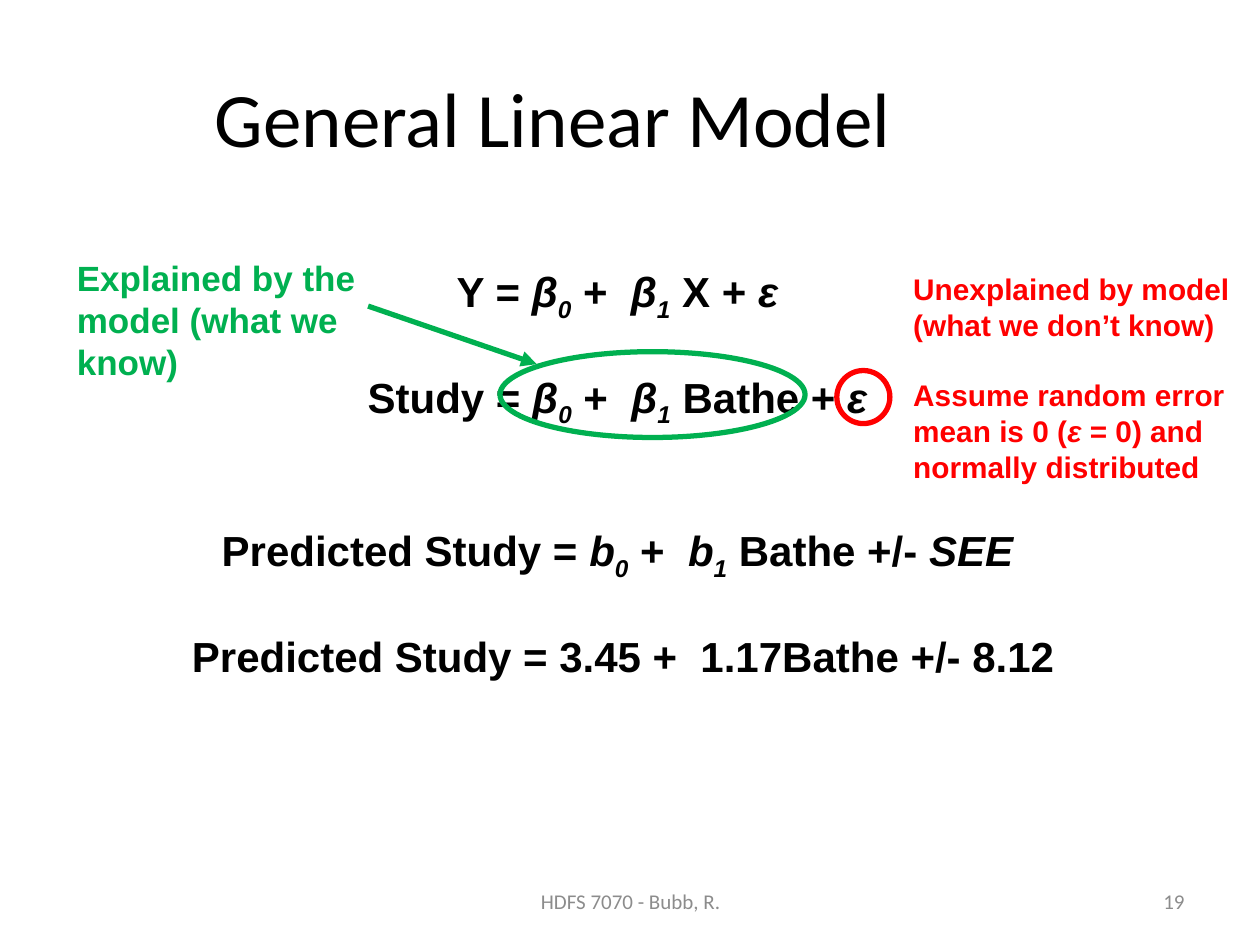
from typing import NamedTuple

from lxml.etree import SubElement
from pptx import Presentation
from pptx.dml.color import RGBColor
from pptx.enum.shapes import MSO_CONNECTOR, MSO_SHAPE
from pptx.enum.text import MSO_ANCHOR, PP_ALIGN
from pptx.oxml.ns import qn
from pptx.util import Cm, Pt

BLACK = RGBColor(0x00, 0x00, 0x00)
GREY = RGBColor(0x8C, 0x8C, 0x8C)
GREEN = RGBColor(0x00, 0xB0, 0x50)
RED = RGBColor(0xFF, 0x00, 0x00)
PLAIN, ITALIC, SUBSCRIPT = "plain", "italic", "subscript"


class Box(NamedTuple):
    """A region of the slide, in centimetres."""
    left: float
    top: float
    width: float
    height: float

    def lengths(self):
        """Return the four values as lengths."""
        return [Cm(value) for value in self]

    def inside(self, left, top, width, height):
        """Return a box placed relative to this one."""
        return Box(self.left + left, self.top + top, width, height)


def write_spans(paragraph, spans, size, color, font="Arial", bold=True):
    """Fill a paragraph with (text, style) spans."""
    for text, style in spans:
        span = paragraph.add_run()
        span.text = text
        span.font.name = font
        span.font.size = Pt(size)
        span.font.bold = bold
        span.font.color.rgb = color
        span.font.italic = style != PLAIN
        if style == SUBSCRIPT:
            span.font._element.set("baseline", "-25000")


def add_text(page, box, lines, size, color, align=PP_ALIGN.LEFT,
             anchor=MSO_ANCHOR.TOP, font="Arial", bold=True):
    """Add a text box from (space before, spans) lines."""
    frame = page.shapes.add_textbox(*box.lengths()).text_frame
    frame.word_wrap = True
    frame.vertical_anchor = anchor
    for number, (space, spans) in enumerate(lines):
        paragraph = frame.add_paragraph() if number else frame.paragraphs[0]
        paragraph.alignment = align
        if space:
            paragraph.space_before = Pt(space)
        write_spans(paragraph, spans, size, color, font, bold)


def add_ring(page, box, color):
    """Add an unfilled ellipse."""
    ring = page.shapes.add_shape(MSO_SHAPE.OVAL, *box.lengths())
    ring.shadow.inherit = False
    ring.fill.background()
    ring.line.color.rgb = color
    ring.line.width = Pt(3)


def add_arrow(page, start, end, color):
    """Add a straight arrow from start to end."""
    arrow = page.shapes.add_connector(
        MSO_CONNECTOR.STRAIGHT, *(Cm(value) for value in (*start, *end)))
    arrow.line.color.rgb = color
    arrow.line.width = Pt(3)
    SubElement(arrow.line._get_or_add_ln(), qn("a:tailEnd"), type="triangle")
    SubElement(arrow._element.spPr, qn("a:effectLst"))


def regression(outcome, letter, predictor, error):
    """Return the spans of a linear equation with two coefficients."""
    return [(f"{outcome} = ", PLAIN), (letter, ITALIC), ("0", SUBSCRIPT),
            (" +  ", PLAIN), (letter, ITALIC), ("1", SUBSCRIPT),
            (f" {predictor} ", PLAIN), (f"{error} ", ITALIC)]


def place_title(page, box):
    """Move and format the title."""
    title = page.shapes.title
    title.left, title.top, title.width, title.height = box.lengths()
    frame = title.text_frame
    frame.text = "General Linear Model"
    frame.vertical_anchor = MSO_ANCHOR.MIDDLE
    paragraph = frame.paragraphs[0]
    paragraph.alignment = PP_ALIGN.CENTER
    font = paragraph.runs[0].font
    font.name, font.size, font.color.rgb = "Calibri", Pt(44), BLACK


def place_equations(page, box):
    """Add the four centred equations."""
    blank = 27.5
    lines = [
        (0, regression("Y", "β", "X +", "ε")),
        (blank, regression("Study", "β", "Bathe +", "ε")),
        (2 * blank, regression("Predicted Study", "b", "Bathe +/-", "SEE")),
        (blank, [("Predicted Study = 3.45 +  1.17Bathe +/- 8.12", PLAIN)]),
    ]
    add_text(page, box, lines, 24, BLACK, PP_ALIGN.CENTER)


def place_explained(page, box):
    """Add the green note, its arrow and the ring round the model."""
    add_ring(page, box.inside(8.78, 2.04, 6.15, 1.73), GREEN)
    note = [("Explained by the model (what we know)", PLAIN)]
    add_text(page, box.inside(0, 0, 7.82, 1.96), [(0, note)], 20, GREEN)
    add_arrow(page, (box.left + 6.12, box.top + 1.12),
              (box.left + 9.52, box.top + 2.29), GREEN)


def place_unexplained(page, box):
    """Add the red note and the ring round the error term."""
    lines = [
        (0, [("Unexplained by model (what we don’t know)", PLAIN)]),
        (20, [("Assume random error mean is 0 (", PLAIN), ("ε", ITALIC),
              (" = 0) and normally distributed", PLAIN)]),
    ]
    add_text(page, box.inside(1.29, 0, 7.04, 4.62), lines, 17, RED)
    add_ring(page, box.inside(0, 2.14, 1.07, 1.07), RED)


def place_footer(page, box):
    """Add the course name and the page number."""
    parts = [("HDFS 7070 - Bubb, R.", 0, 8.05, PP_ALIGN.CENTER),
             ("19", 9.52, 5.92, PP_ALIGN.RIGHT)]
    for text, left, width, align in parts:
        add_text(page, box.inside(left, 0, width, box.height),
                 [(0, [(text, PLAIN)])], 12, GREY, align,
                 MSO_ANCHOR.MIDDLE, "Calibri", False)


def main():
    """Build and save the deck."""
    deck = Presentation()
    deck.slide_width, deck.slide_height = Cm(25.4), Cm(19.05)
    page = deck.slides.add_slide(deck.slide_layouts[5])
    place_title(page, Box(1.27, 0.76, 19.76, 3.18))
    place_footer(page, Box(8.69, 17.65, 15.44, 1.02))
    place_equations(page, Box(0.08, 5.23, 24.97, 8.46))
    place_explained(page, Box(1.3, 5.05, 14.93, 3.77))
    place_unexplained(page, Box(16.87, 5.33, 8.33, 4.62))
    deck.save("out.pptx")


if __name__ == "__main__":
    main()
